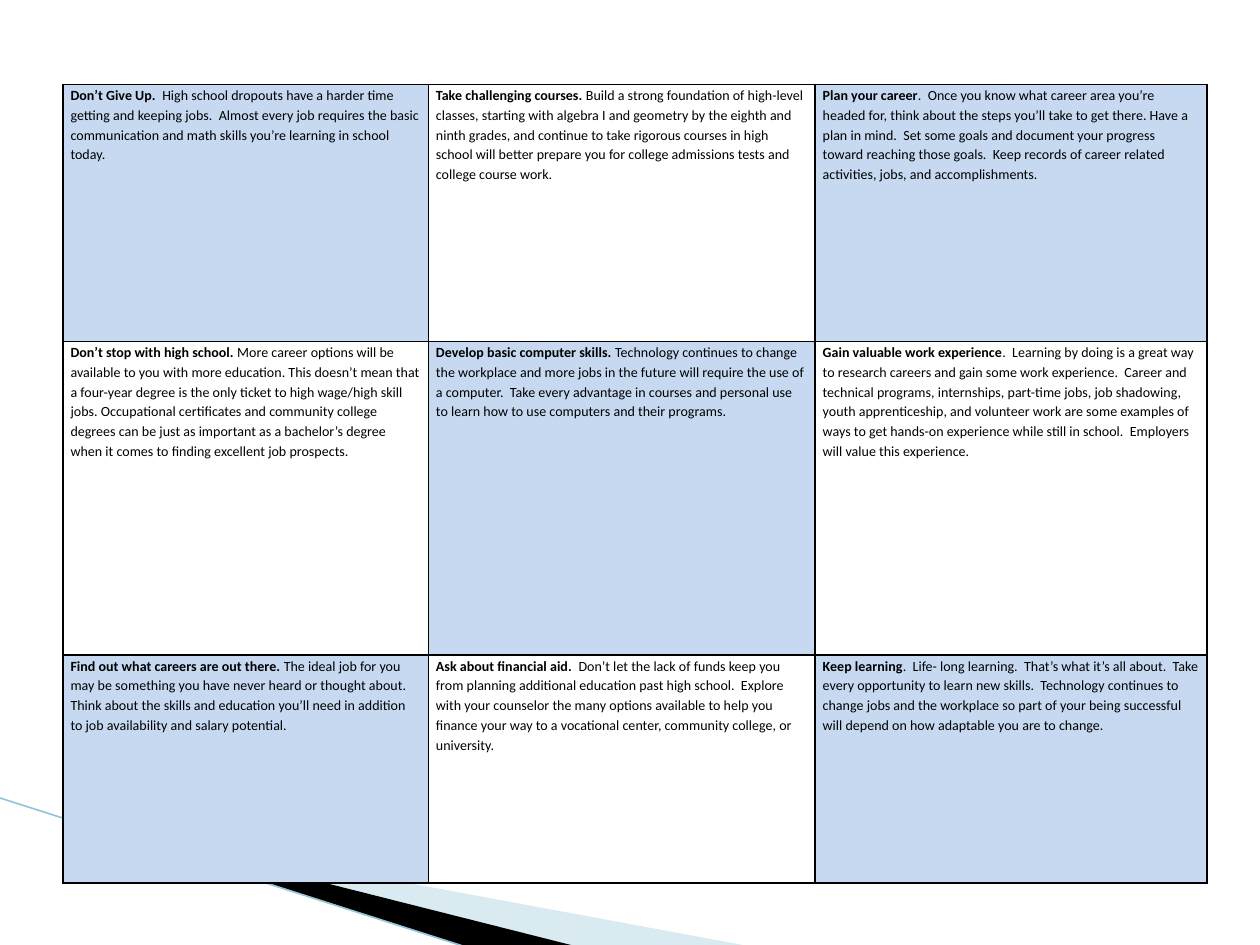
from dataclasses import dataclass

from pptx import Presentation
from pptx.dml.color import RGBColor
from pptx.enum.shapes import MSO_CONNECTOR
from pptx.oxml import parse_xml
from pptx.oxml.ns import nsdecls, qn
from pptx.util import Inches, Pt

STRAIGHT = MSO_CONNECTOR.STRAIGHT


@dataclass(frozen=True)
class Theme:
    font: str = "Calibri"
    size: float = 8
    spacing: float = 1.15
    ink: str = "000000"
    tint: str = "C6D9F1"
    swoosh: str = "A0CBDC"
    accent: str = "97C5D8"
    border: float = 1
    accent_width: float = 0.95


COLUMNS = [2.9, 3.07, 3.11]
ROWS = [2.04, 2.49, 1.81]
TIPS = [
    [
        ("Don’t Give Up.  ",
         "High school dropouts have a harder time getting and keeping jobs.  Almost every job "
         "requires the basic communication and math skills you’re learning in school today."),
        ("Take challenging courses.",
         " Build a strong foundation of high-level classes, starting with algebra I and geometry "
         "by the eighth and ninth grades, and continue to take rigorous courses in high school "
         "will better prepare you for college admissions tests and college course work."),
        ("Plan your career",
         ".  Once you know what career area you’re headed for, think about the steps you’ll take "
         "to get there. Have a plan in mind.  Set some goals and document your progress toward "
         "reaching those goals.  Keep records of career related activities, jobs, and "
         "accomplishments."),
    ],
    [
        ("Don’t stop with high school.",
         " More career options will be available to you with more education. This doesn’t mean "
         "that a four-year degree is the only ticket to high wage/high skill jobs. Occupational "
         "certificates and community college degrees can be just as important as a bachelor’s "
         "degree when it comes to finding excellent job prospects."),
        ("Develop basic computer skills. ",
         "Technology continues to change the workplace and more jobs in the future will require "
         "the use of a computer.  Take every advantage in courses and personal use to learn how "
         "to use computers and their programs."),
        ("Gain valuable work experience",
         ".  Learning by doing is a great way to research careers and gain some work experience.  "
         "Career and technical programs, internships, part-time jobs, job shadowing, youth "
         "apprenticeship, and volunteer work are some examples of ways to get hands-on experience "
         "while still in school.  Employers will value this experience."),
    ],
    [
        ("Find out what careers are out there.",
         " The ideal job for you may be something you have never heard or thought about.  Think "
         "about the skills and education you’ll need in addition to job availability and salary "
         "potential."),
        ("Ask about financial aid.  ",
         "Don’t let the lack of funds keep you from planning additional education past high "
         "school.  Explore with your counselor the many options available to help you finance "
         "your way to a vocational center, community college, or university."),
        ("Keep learning",
         ".  Life- long learning.  That’s what it’s all about.  Take every opportunity to learn "
         "new skills.  Technology continues to change jobs and the workplace so part of your "
         "being successful will depend on how adaptable you are to change."),
    ],
]


class SlideBuilder:
    def __init__(self, slide, theme):
        self.slide = slide
        self.theme = theme

    def wedge(self, points, color, opacity=100):
        start, *rest = [(Inches(x), Inches(y)) for x, y in points]
        builder = self.slide.shapes.build_freeform(*start)
        builder.add_line_segments(rest, close=True)
        sp = builder.convert_to_shape()
        sp.shadow.inherit = False
        sp.fill.solid()
        sp.fill.fore_color.rgb = RGBColor.from_string(color)
        sp.line.fill.background()
        if opacity < 100:
            clr = sp._element.spPr.find(qn("a:solidFill")).find(qn("a:srgbClr"))
            clr.append(parse_xml(f'<a:alpha {nsdecls("a")} val="{opacity * 1000}"/>'))

    def line(self, start, end):
        ends = [Inches(v) for v in (*start, *end)]
        sp = self.slide.shapes.add_connector(STRAIGHT, *ends)
        sp.line.color.rgb = RGBColor.from_string(self.theme.accent)
        sp.line.width = Pt(self.theme.accent_width)
        sp._element.spPr.append(parse_xml(f'<a:effectLst {nsdecls("a")}/>'))

    def table(self, left, top, widths, heights, rows):
        frame = self.slide.shapes.add_table(
            len(heights), len(widths), Inches(left), Inches(top),
            Inches(sum(widths)), Inches(sum(heights)))
        table = frame.table
        table.first_row = table.horz_banding = False
        for column, width in zip(table.columns, widths):
            column.width = Inches(width)
        for row, height in zip(table.rows, heights):
            row.height = Inches(height)
        for i, row in enumerate(rows):
            for j, tip in enumerate(row):
                self.cell(table.cell(i, j), tip, shaded=(i + j) % 2 == 0)

    def cell(self, cell, tip, shaded):
        t = self.theme
        cell.margin_left = cell.margin_right = Inches(0.06)
        cell.margin_top = cell.margin_bottom = 0
        self.borders(cell)
        if shaded:
            cell.fill.solid()
            cell.fill.fore_color.rgb = RGBColor.from_string(t.tint)
        else:
            cell.fill.background()
        p = cell.text_frame.paragraphs[0]
        p.line_spacing = t.spacing
        p.font.name = t.font
        p.font.size = Pt(t.size)
        p.font.color.rgb = RGBColor.from_string(t.ink)
        for text, bold in zip(tip, (True, False)):
            r = p.add_run()
            r.text = text
            r.font.bold = bold

    def borders(self, cell):
        tc_pr = cell._tc.get_or_add_tcPr()
        for side in "LRTB":
            tc_pr.append(parse_xml(
                f'<a:ln{side} {nsdecls("a")} w="{Pt(self.theme.border)}"><a:solidFill>'
                f'<a:srgbClr val="{self.theme.ink}"/></a:solidFill></a:ln{side}>'))


def main():
    prs = Presentation()
    prs.slide_width, prs.slide_height = Inches(10), Inches(7.5)
    theme = Theme()
    s = SlideBuilder(prs.slides.add_slide(prs.slide_layouts[6]), theme)
    s.wedge([(0.55, 6.51), (5.95, 7.51), (4.56, 7.51), (0.55, 6.5)], theme.swoosh, opacity=40)
    s.wedge([(0.53, 6.49), (4.57, 7.51), (3.72, 7.52), (0.54, 6.5)], theme.ink)
    s.line((-0.01, 6.33), (3.71, 7.52))
    s.table(0.5, 0.67, COLUMNS, ROWS, TIPS)
    prs.save("out.pptx")


if __name__ == "__main__":
    main()
